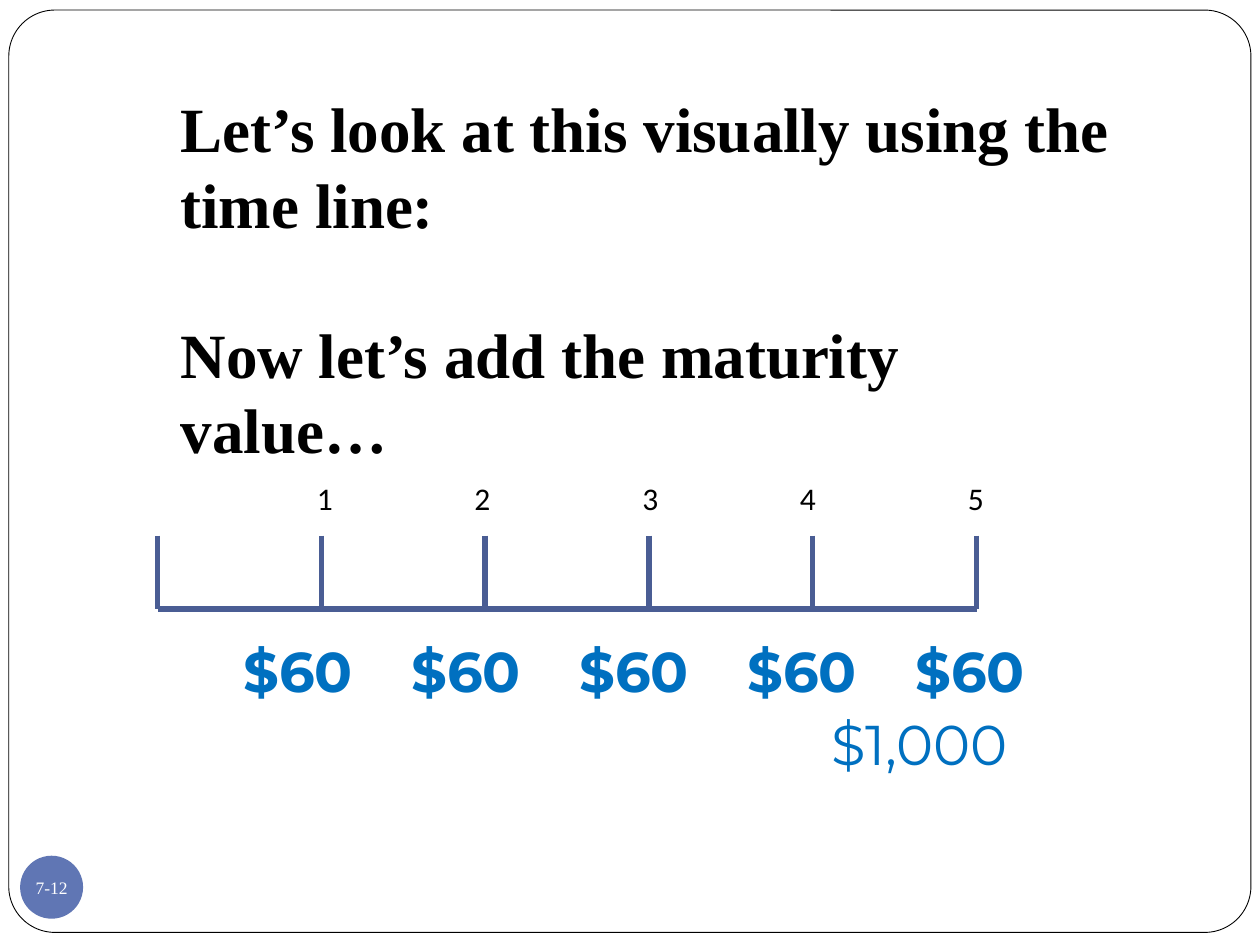
from lxml import etree
from pptx import Presentation, util as u
from pptx.dml.color import RGBColor
from pptx.enum import shapes, text
from pptx.oxml.ns import qn

COLUMNS, ROWS = 120, 90
SERIF, SANS, DISPLAY = "Times New Roman", "Calibri", "Montserrat"
BLACK, WHITE, BLUE, AXIS, BADGE = "000000", "FFFFFF", "0070C0", "4A5D94", "6076B4"


def color(code):
    return RGBColor.from_string(code)


class Page:
    def __init__(self, deck):
        self.cell_width = deck.slide_width / COLUMNS
        self.cell_height = deck.slide_height / ROWS
        self.slide = deck.slides.add_slide(deck.slide_layouts[5])

    def x(self, columns):
        return u.Emu(round(columns * self.cell_width))

    def y(self, rows):
        return u.Emu(round(rows * self.cell_height))

    def area(self, left, top, width, height):
        return self.x(left), self.y(top), self.x(width), self.y(height)

    def add_span(self, para, words, font, size, code, bold=False):
        span = para.add_run()
        span.text = words
        span.font.name, span.font.size, span.font.bold = font, u.Pt(size), bold
        span.font.color.rgb = color(code)

    def title(self, paragraphs, area):
        box = self.slide.shapes.title
        box.left, box.top, box.width, box.height = self.area(*area)
        self.slide.shapes._spTree.append(box._element)
        frame = box.text_frame
        frame.word_wrap = True
        frame.auto_size = text.MSO_AUTO_SIZE.SHAPE_TO_FIT_TEXT
        frame.vertical_anchor = text.MSO_ANCHOR.TOP
        line_height = u.Pt(43)
        for index, words in enumerate(paragraphs):
            para = frame.add_paragraph() if index else frame.paragraphs[0]
            para.alignment = text.PP_ALIGN.LEFT
            para.line_spacing = line_height
            para.space_before = line_height if index else u.Pt(0)
            self.add_span(para, words, SERIF, 36, BLACK, True)

    def label(self, words, area, font, size, code, bold=False):
        box = self.slide.shapes.add_textbox(*self.area(*area))
        box.text_frame.word_wrap = True
        box.text_frame.auto_size = text.MSO_AUTO_SIZE.SHAPE_TO_FIT_TEXT
        self.add_span(box.text_frame.paragraphs[0], words, font, size, code, bold)

    def shape(self, kind, area, fill, line=None):
        shape = self.slide.shapes.add_shape(kind, *self.area(*area))
        shape.shadow.inherit = False
        shape.fill.solid()
        shape.fill.fore_color.rgb = color(fill)
        if line:
            shape.line.color.rgb = color(line)
            shape.line.width = u.Pt(0.5)
        else:
            shape.line.fill.background()
        return shape

    def frame(self, area):
        shape = self.shape(shapes.MSO_SHAPE.ROUNDED_RECTANGLE, area, WHITE, BLACK)
        shape.adjustments[0] = 0.05

    def badge(self, words, area):
        frame = self.shape(shapes.MSO_SHAPE.OVAL, area, BADGE).text_frame
        frame.margin_left = frame.margin_right = frame.margin_top = frame.margin_bottom = 0
        frame.word_wrap = False
        frame.vertical_anchor = text.MSO_ANCHOR.MIDDLE
        para = frame.paragraphs[0]
        para.alignment = text.PP_ALIGN.CENTER
        self.add_span(para, words, SERIF, 10, WHITE)

    def line(self, left, top, right, bottom):
        line = self.slide.shapes.add_connector(
            shapes.MSO_CONNECTOR.STRAIGHT,
            self.x(left), self.y(top), self.x(right), self.y(bottom))
        line.line.color.rgb = color(AXIS)
        line.line.width = u.Pt(3)
        etree.SubElement(line._element.spPr, qn("a:effectLst"))


def main():
    deck = Presentation()
    deck.slide_width, deck.slide_height = u.Inches(10), u.Inches(7.5)
    page = Page(deck)
    page.frame((0.84, 0.96, 118.3, 87.84))
    page.badge("7-12", (1.92, 81.5, 6, 6))
    page.title(["Let’s look at this visually using the time line:",
                "Now let’s add the maturity value…"], (16, 8, 91, 30.24))

    start, step, periods = 15, 15.6, 5
    tick_top, axis = 51, 58
    page.line(start, axis, start + periods * step, axis)
    for period in range(periods + 1):
        tick = start + period * step
        page.line(tick, tick_top, tick, axis)
    for index in range(periods):
        page.label(str(index + 1), (29 + index * 31 // 2, 45, 4, 4.8), SANS, 18, BLACK)
    for index in range(periods):
        page.label("$60", (22 + 16 * index, 60, 14, 7.68), DISPLAY, 32, BLUE, True)
    page.label("$1,000", (78, 67, 27, 7.68), DISPLAY, 32, BLUE)
    deck.save("out.pptx")


if __name__ == "__main__":
    main()
